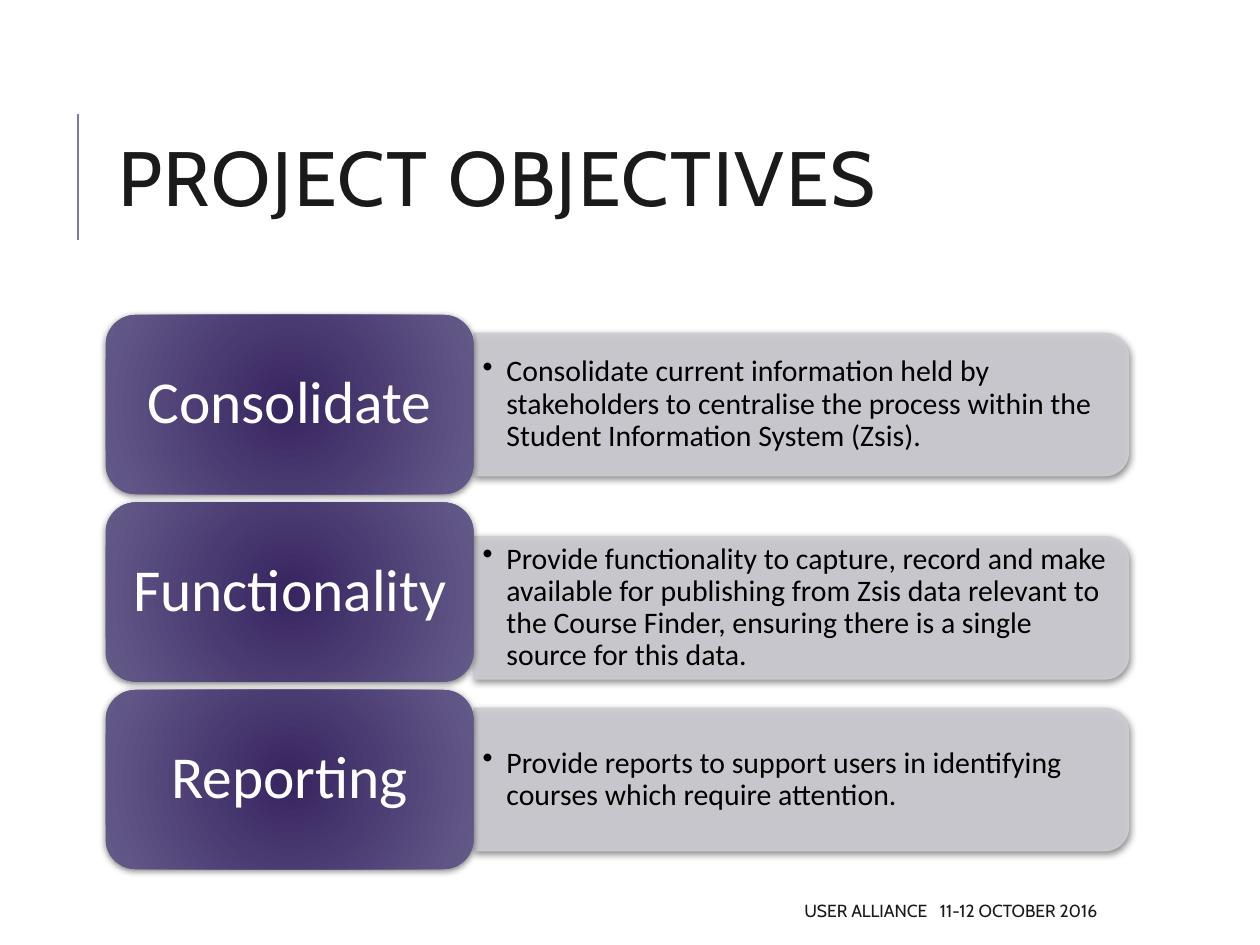
from lxml import etree
from pptx import Presentation
from pptx.dml.color import RGBColor
from pptx.enum.shapes import MSO_CONNECTOR, MSO_SHAPE
from pptx.enum.text import MSO_ANCHOR, MSO_AUTO_SIZE, PP_ALIGN
from pptx.oxml import parse_xml
from pptx.oxml.ns import nsdecls, qn
from pptx.util import Cm, Pt

LEFT, CENTER, RIGHT = PP_ALIGN.LEFT, PP_ALIGN.CENTER, PP_ALIGN.RIGHT
MIDDLE = MSO_ANCHOR.MIDDLE
NO_AUTOFIT = MSO_AUTO_SIZE.NONE
ROUNDED, ROUNDED_END = MSO_SHAPE.ROUNDED_RECTANGLE, MSO_SHAPE.ROUND_2_SAME_RECTANGLE
STRAIGHT = MSO_CONNECTOR.STRAIGHT

COLORS = {"ink": "1A1A1A", "accent": "7F7B99", "panel": "CECDD3", "black": "000000",
          "white": "FFFFFF", "core": "372560", "rim": "655B8A"}

TITLE = {"size": Pt(44), "name": "Cabin", "color": "ink"}
FOOTER = {"size": Pt(10), "name": "Cabin", "color": "ink"}
LABEL = {"size": Pt(34), "name": "Calibri", "color": "white"}
DETAIL = {"size": Pt(17), "name": "Calibri", "color": "black"}

# Heading, detail text, downward shift of the detail panel
OBJECTIVES = [
    ("Consolidate",
     "Consolidate current information held by stakeholders to centralise the process "
     "within the Student Information System (Zsis).", Cm(0)),
    ("Functionality",
     "Provide functionality to capture, record and make available for publishing from "
     "Zsis data relevant to the Course Finder, ensuring there is a single source for "
     "this data.", Cm(0.32)),
    ("Reporting",
     "Provide reports to support users in identifying courses which require attention.",
     Cm(0)),
]

LABEL_LEFT, LABEL_TOP = Cm(2.13), Cm(6.35)
LABEL_WIDTH, LABEL_HEIGHT, LABEL_PITCH = Cm(7.42), Cm(3.61), Cm(3.78)
PANEL_LEFT = LABEL_LEFT + LABEL_WIDTH
PANEL_WIDTH, PANEL_HEIGHT = Cm(13.2), Cm(2.87)
DETAIL_WIDTH, DETAIL_HEIGHT = Cm(13.06), Cm(2.59)


def rgb(name):
    return RGBColor.from_string(COLORS[name])


def add_run(paragraph, text, style, tracking=0):
    """Append a run; tracking is extra letter spacing in points."""
    run = paragraph.add_run()
    run.text = text
    for key in ("size", "name"):
        setattr(run.font, key, style[key])
    run.font.color.rgb = rgb(style["color"])
    if tracking:
        run.font._element.set("spc", str(tracking * 100))


def format_frame(frame, align, spacing=1.0, margins=(Cm(0.25), Cm(0.13))):
    """Set up a middle-anchored frame and return its first paragraph."""
    side, edge = margins
    values = {"word_wrap": True, "auto_size": NO_AUTOFIT, "vertical_anchor": MIDDLE,
              "margin_left": side, "margin_right": side,
              "margin_top": edge, "margin_bottom": edge}
    for key, value in values.items():
        setattr(frame, key, value)
    paragraph = frame.paragraphs[0]
    paragraph.alignment = align
    paragraph.line_spacing = spacing
    return paragraph


def add_shadow(shape):
    shape.shadow.inherit = False
    effects = shape._element.spPr.find(qn("a:effectLst"))
    effects.append(parse_xml(
        f'<a:outerShdw {nsdecls("a")} blurRad="{Pt(4)}" dist="{Pt(1)}" dir="5400000" '
        f'rotWithShape="0"><a:srgbClr val="{COLORS["black"]}"><a:alpha val="50000"/>'
        '</a:srgbClr></a:outerShdw>'))


def fill_radial(shape):
    """Fade from the core colour in the middle to the rim colour."""
    shape.fill.background()
    properties = shape._element.spPr
    properties.replace(properties.find(qn("a:noFill")), parse_xml(
        f'<a:gradFill {nsdecls("a")} rotWithShape="1"><a:gsLst>'
        f'<a:gs pos="0"><a:srgbClr val="{COLORS["core"]}"/></a:gs>'
        f'<a:gs pos="100000"><a:srgbClr val="{COLORS["rim"]}"/></a:gs></a:gsLst>'
        '<a:path path="circle"><a:fillToRect l="100000" t="100000" r="100000" '
        'b="100000"/></a:path></a:gradFill>'))


def add_title(slide, text):
    title = slide.shapes.title
    box = {"left": Cm(2.13), "top": Cm(1.63), "width": Cm(20.24), "height": Cm(4.17)}
    for key, value in box.items():
        setattr(title, key, value)
    add_run(format_frame(title.text_frame, LEFT, 0.8), text, TITLE, tracking=1)


def add_accent_line(slide):
    x = Cm(1.57)
    accent = slide.shapes.add_connector(STRAIGHT, x, Cm(4.83), x, Cm(2.29))
    accent.line.color.rgb = rgb("accent")
    accent.line.width = Pt(1.5)
    etree.SubElement(accent._element.spPr, qn("a:effectLst"))


def add_footer(slide, event, date):
    footer = slide.shapes.add_textbox(Cm(10.08), Cm(17.98), Cm(12.29), Cm(0.76))
    paragraph = format_frame(footer.text_frame, RIGHT)
    add_run(paragraph, event, FOOTER)
    add_run(paragraph, " ", FOOTER, tracking=5)
    add_run(paragraph, date, FOOTER)


def add_panel(slide, middle):
    """Draw a bar rounded at its right end, by turning an upright shape."""
    panel = slide.shapes.add_shape(
        ROUNDED_END, PANEL_LEFT + (PANEL_WIDTH - PANEL_HEIGHT) // 2,
        middle - PANEL_WIDTH // 2, PANEL_HEIGHT, PANEL_WIDTH)
    panel.rotation = 90
    panel.fill.solid()
    panel.fill.fore_color.rgb = rgb("panel")
    panel.line.color.rgb = rgb("panel")
    panel.line.width = Pt(0.75)
    for color in panel._element.spPr.iter(qn("a:srgbClr")):
        etree.SubElement(color, qn("a:alpha"), val="90000")
    add_shadow(panel)


def add_detail(slide, text, middle):
    detail = slide.shapes.add_textbox(PANEL_LEFT, middle - DETAIL_HEIGHT // 2,
                                      DETAIL_WIDTH, DETAIL_HEIGHT)
    paragraph = format_frame(detail.text_frame, LEFT, 0.9, (Cm(0.18), Cm(0.1)))
    properties = paragraph._p.get_or_add_pPr()
    properties.set("marL", str(Cm(0.48)))
    properties.set("indent", str(-Cm(0.48)))
    etree.SubElement(properties, qn("a:buChar"), char="•")
    add_run(paragraph, text, DETAIL)


def add_label(slide, text, top):
    label = slide.shapes.add_shape(ROUNDED, LABEL_LEFT, top, LABEL_WIDTH, LABEL_HEIGHT)
    fill_radial(label)
    label.line.fill.background()
    add_shadow(label)
    paragraph = format_frame(label.text_frame, CENTER, 0.9, (Cm(0.36), Cm(0.18)))
    add_run(paragraph, text, LABEL)


def main():
    presentation = Presentation()
    presentation.slide_width, presentation.slide_height = Cm(25.4), Cm(19.05)
    slide = presentation.slides.add_slide(presentation.slide_layouts[5])
    add_accent_line(slide)
    add_title(slide, "PROJECT OBJECTIVES")
    add_footer(slide, "USER ALLIANCE", "11-12 OCTOBER 2016")
    for row, (heading, detail, shift) in enumerate(OBJECTIVES):
        top = LABEL_TOP + row * LABEL_PITCH
        middle = top + LABEL_HEIGHT // 2 + shift
        add_panel(slide, middle)
        add_detail(slide, detail, middle)
        add_label(slide, heading, top)
    presentation.save("out.pptx")


if __name__ == "__main__":
    main()
